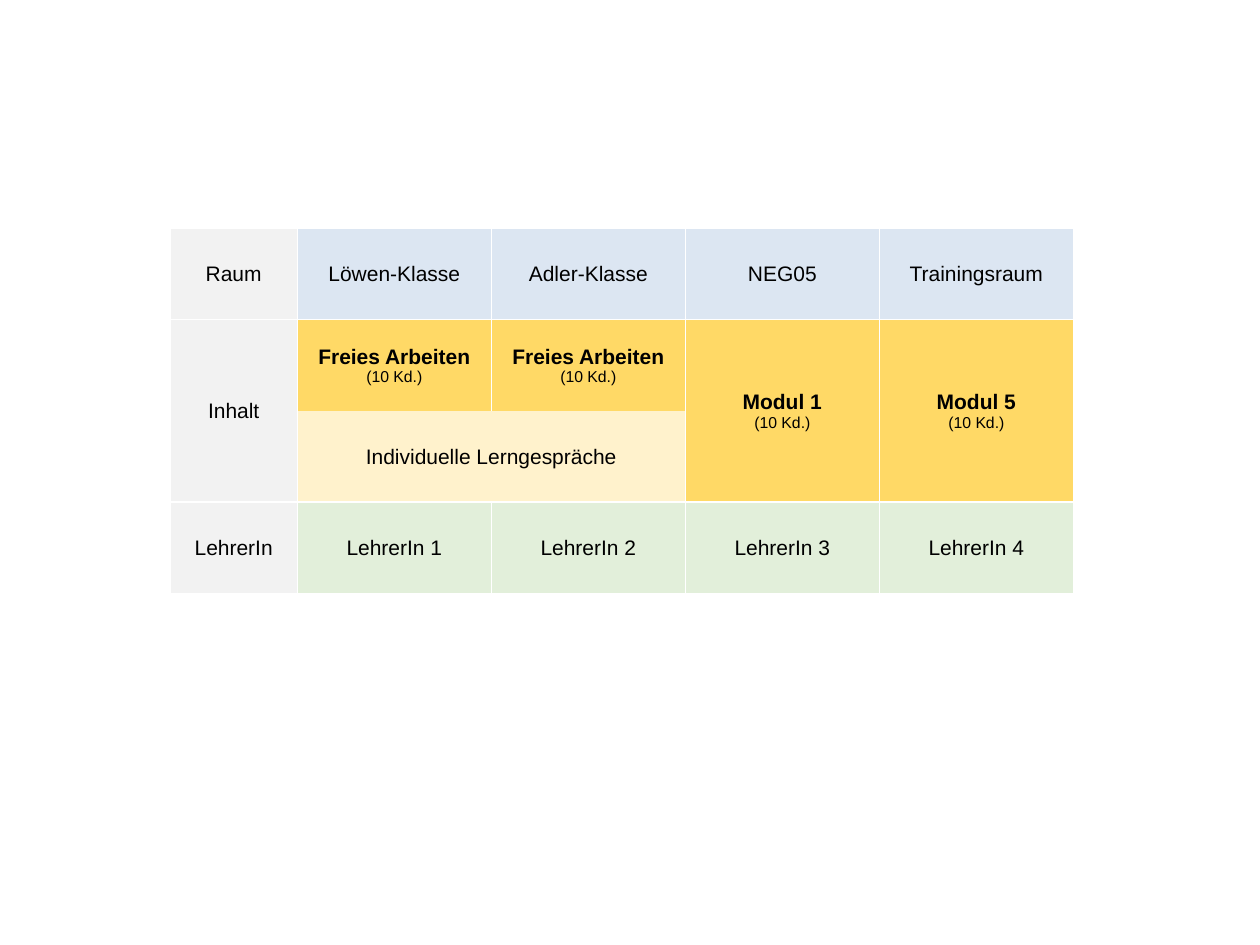
import pptx
import pptx.util
import pptx.dml.color
import pptx.enum.text
import pptx.oxml.ns
import lxml.etree

Inches, Pt = pptx.util.Inches, pptx.util.Pt
RGB = pptx.dml.color.RGBColor.from_string

# Content: (text, fill); a line break starts the small note; None is merged
COLORS = {"label": "F2F2F2", "room": "DCE6F2", "work": "FFD966",
          "talk": "FFF2CC", "staff": "E2EFDA", "text": "000000",
          "line": "FFFFFF"}
ROWS = [
    [("Raum", "label"), ("Löwen-Klasse", "room"), ("Adler-Klasse", "room"),
     ("NEG05", "room"), ("Trainingsraum", "room")],
    [("Inhalt", "label"), ("Freies Arbeiten\n(10 Kd.)", "work"),
     ("Freies Arbeiten\n(10 Kd.)", "work"), ("Modul 1\n(10 Kd.)", "work"),
     ("Modul 5\n(10 Kd.)", "work")],
    [None, ("Individuelle Lerngespräche", "talk"), None, None, None],
    [("LehrerIn", "label")] + [(f"LehrerIn {n}", "staff") for n in range(1, 5)],
]
MERGES = [((1, 0), (2, 0)), ((1, 3), (2, 3)), ((1, 4), (2, 4)),
          ((2, 1), (2, 2))]
# Sides without a line, between free work and talks
OPEN = {(1, 1): "B", (1, 2): "B", (2, 1): "T", (2, 2): "T"}

WIDTHS = [1.01] + [1.54] * 4
HIGH = 0.725
CELL = {"margin_left": Inches(0.01), "margin_right": Inches(0.01),
        "margin_top": Inches(0.01), "margin_bottom": 0,
        "vertical_anchor": pptx.enum.text.MSO_ANCHOR.MIDDLE}
MAIN = {"name": "Arial", "size": Pt(12), "bold": False}
HEAD = {**MAIN, "bold": True}
NOTE = {**MAIN, "size": Pt(9)}


def put(item, style):
    for key, value in style.items():
        setattr(item, key, value)


def edge(cell, gap):
    """Draw the cell's border lines, leaving out the sides in gap."""
    props = cell._tc.get_or_add_tcPr()
    for spot, side in enumerate("LRTB"):
        line = lxml.etree.Element(pptx.oxml.ns.qn(f"a:ln{side}"), w=str(Pt(1)))
        if side in gap:
            lxml.etree.SubElement(line, pptx.oxml.ns.qn("a:noFill"))
        else:
            fill = lxml.etree.SubElement(line, pptx.oxml.ns.qn("a:solidFill"))
            lxml.etree.SubElement(fill, pptx.oxml.ns.qn("a:srgbClr"),
                                  val=COLORS["line"])
        props.insert(spot, line)


def write(cell, text):
    lines = text.split("\n")
    cell.text = text
    styles = [HEAD, NOTE] if len(lines) > 1 else [MAIN]
    for para, style in zip(cell.text_frame.paragraphs, styles):
        para.alignment = pptx.enum.text.PP_ALIGN.CENTER
        font = para.runs[0].font
        put(font, style)
        font.color.rgb = RGB(COLORS["text"])


deck = pptx.Presentation()
deck.slide_width, deck.slide_height = Inches(10), Inches(7.5)
slide = deck.slides.add_slide(deck.slide_layouts[6])

# Table grid
table = slide.shapes.add_table(
    len(ROWS), len(WIDTHS), Inches(1.35), Inches(1.81),
    Inches(sum(WIDTHS)), Inches(HIGH * len(ROWS))).table
table.first_row = table.horz_banding = False
for col, wide in zip(table.columns, WIDTHS):
    col.width = Inches(wide)
for row in table.rows:
    row.height = Inches(HIGH)
for start, end in MERGES:
    table.cell(*start).merge(table.cell(*end))

# Cells
for r, row in enumerate(ROWS):
    for c, item in enumerate(row):
        cell = table.cell(r, c)
        put(cell, CELL)
        if item:
            text, kind = item
            cell.fill.solid()
            cell.fill.fore_color.rgb = RGB(COLORS[kind])
            write(cell, text)
        edge(cell, OPEN.get((r, c), ""))

deck.save("out.pptx")
